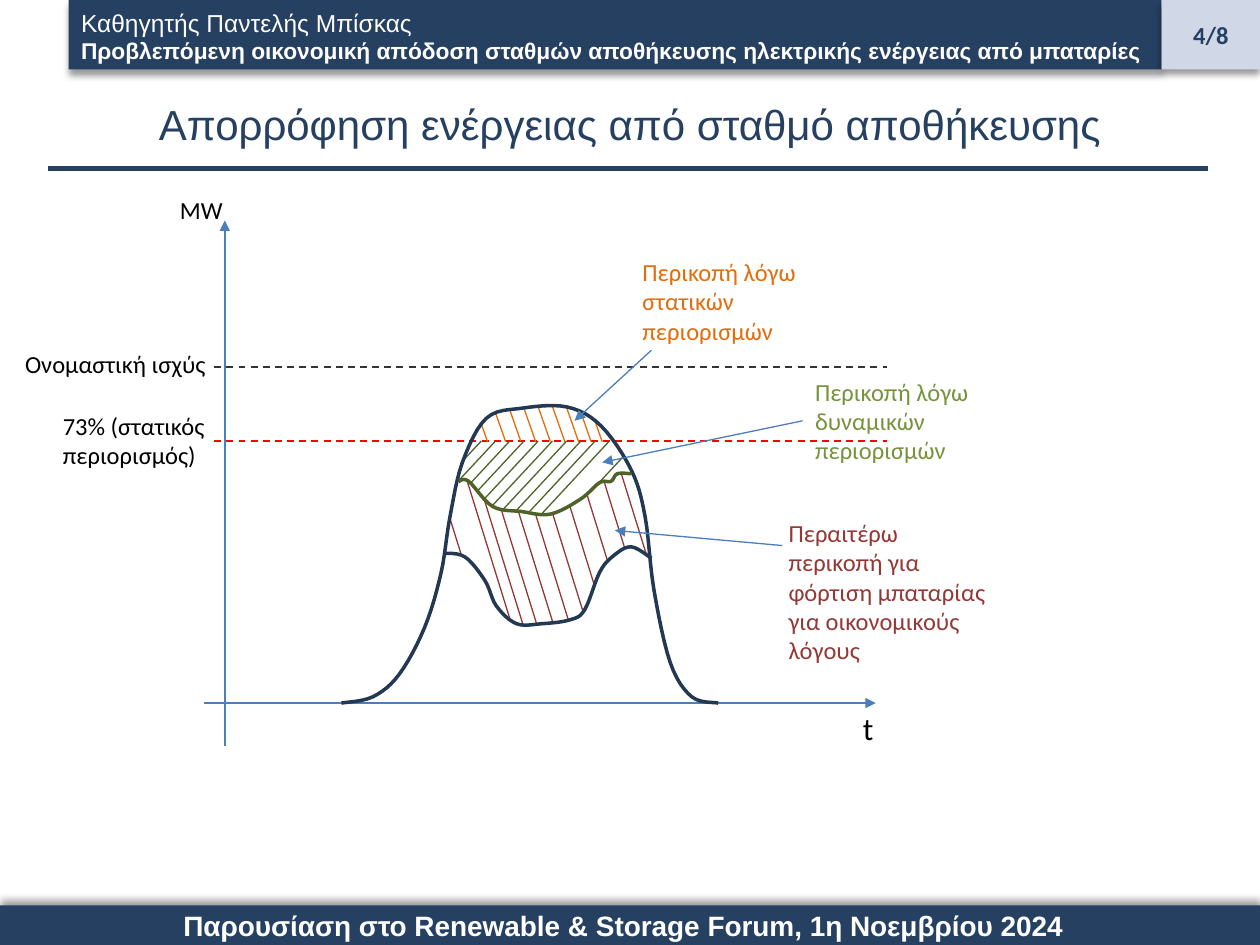
from lxml import etree
from pptx import Presentation
from pptx import util as u
from pptx.dml.color import RGBColor
from pptx.enum import dml, shapes, text
from pptx.oxml.ns import qn

COLUMNS, ROWS = 100, 75
WIDTH, HEIGHT = u.Inches(10), u.Inches(7.5)
COLORS = {
    "navy": "254061", "pale": "D0D8E8", "white": "FFFFFF", "black": "000000",
    "arrow": "4B7EBC", "curve": "233953", "nominal": "333333", "limit": "FF0000",
    "static": "E46C0A", "dynamic": "4F6228", "dynamic_text": "77933C", "charging": "953735",
}
LEFT, CENTER = text.PP_ALIGN.LEFT, text.PP_ALIGN.CENTER
TOP, MIDDLE = text.MSO_ANCHOR.TOP, text.MSO_ANCHOR.MIDDLE

TIME_AXIS, POWER_AXIS = 55.8, 17.85
NOMINAL_POWER, STATIC_LIMIT = 29.15, 35
LIMIT_START, LIMIT_END = 17, 70.4

PRODUCTION_KNOTS = [
    (27.1, TIME_AXIS), (29.6, 55.3), (31.7, 53.5), (33.7, 49.8), (35, 45.5), (35.7, 41.1),
    (36.7, 36.7), (38.6, 33.2), (41.4, 32.4), (45, 32.3), (47.7, 33.8), (50.1, 37.3),
    (51.2, 41), (51.9, 46.8), (53.2, 52.6), (54.9, 55.3), (57, TIME_AXIS),
]
DYNAMIC_KNOTS = [
    (36.4, 38.2), (37.2, 38.2), (39.1, 40.2), (41.4, 40.6), (43.7, 40.8),
    (46.1, 39.6), (47.6, 38.3), (48.5, 38.2), (49, 37.6), (50.1, 37.6),
]
CHARGING_KNOTS = [
    (35.2, 43.9), (36.9, 44.2), (38.5, 46.1), (39.4, 48.1), (41, 49.5), (43, 49.5),
    (45.2, 49.2), (46.4, 48.4), (47.6, 45.4), (48.7, 44.1), (50.1, 43.4), (51.7, 44.3),
]


def smooth(knots, steps=6):
    padded = [knots[0], *knots, knots[-1]]
    points = []
    for before, start, end, after in zip(padded, padded[1:], padded[2:], padded[3:]):
        for step in range(steps):
            t = step / steps
            points.append(tuple(
                b + t * (c - a) / 2 + t ** 2 * (2 * a - 5 * b + 4 * c - d) / 2
                + t ** 3 * (3 * b - a - 3 * c + d) / 2
                for a, b, c, d in zip(before, start, end, after)))
    return points + [knots[-1]]


def level(curve, x):
    if x <= curve[0][0]:
        return curve[0][1]
    for (x1, y1), (x2, y2) in zip(curve, curve[1:]):
        if x1 <= x <= x2:
            return y1 + (y2 - y1) * (x - x1) / (x2 - x1) if x2 > x1 else y1
    return curve[-1][1]


def hatch(first, last, count, slant, ceiling, floor, step=0.1):
    for i in range(count):
        x = head_x = first + (last - first) * i / (count - 1)
        y = head_y = ceiling(head_x)
        while ceiling(x) <= y < floor(x):
            x, y = x + slant * step, y + step
        yield head_x, head_y, x, y


def color(name):
    return RGBColor.from_string(COLORS[name])


def grid(*cells):
    return [round(cell * (HEIGHT / ROWS if i % 2 else WIDTH / COLUMNS))
            for i, cell in enumerate(cells)]


def write(frame, lines, align, anchor):
    frame.word_wrap = True
    frame.vertical_anchor = anchor
    for i, (words, font, size, bold, tint) in enumerate(lines):
        paragraph = frame.add_paragraph() if i else frame.paragraphs[0]
        paragraph.text = words
        paragraph.alignment = align
        paragraph.font.name = font
        paragraph.font.size = u.Pt(size)
        paragraph.font.bold = bold
        paragraph.font.color.rgb = color(tint)


def add_label(slide, cells, words, tint="black", size=14, font="Calibri",
              align=LEFT, anchor=TOP):
    box = slide.shapes.add_textbox(*grid(*cells))
    write(box.text_frame, [(words, font, size, False, tint)], align, anchor)


def add_band(slide, cells, fill, lines, align, shadow_angle):
    band = slide.shapes.add_shape(shapes.MSO_SHAPE.RECTANGLE, *grid(*cells))
    band.fill.solid()
    band.fill.fore_color.rgb = color(fill)
    band.line.fill.background()
    band.shadow.inherit = False
    effects = band._element.spPr.find(qn("a:effectLst"))
    shadow = etree.SubElement(effects, qn("a:outerShdw"), blurRad=str(u.Pt(4)),
                              dist=str(u.Pt(3)), dir=str(shadow_angle * 60000),
                              algn="t", rotWithShape="0")
    tint = etree.SubElement(shadow, qn("a:srgbClr"), val=COLORS["black"])
    etree.SubElement(tint, qn("a:alpha"), val="40000")
    write(band.text_frame, lines, align, MIDDLE)
    return band.text_frame


def add_line(slide, cells, tint, width=0.75, dashed=False, arrow=False):
    line = slide.shapes.add_connector(shapes.MSO_CONNECTOR.STRAIGHT, *grid(*cells))
    line.line.color.rgb = color(tint)
    line.line.width = u.Pt(width)
    if dashed:
        line.line.dash_style = dml.MSO_LINE.DASH
    if arrow:
        etree.SubElement(line.line._get_or_add_ln(), qn("a:tailEnd"), type="triangle")
    etree.SubElement(line._element.spPr, qn("a:effectLst"))


def add_curve(slide, points, tint):
    start, *rest = [grid(*point) for point in points]
    builder = slide.shapes.build_freeform(*start)
    builder.add_line_segments(rest, close=False)
    curve = builder.convert_to_shape()
    curve.fill.background()
    curve.line.color.rgb = color(tint)
    curve.line.width = u.Pt(2)
    curve.shadow.inherit = False


def add_callout(slide, cells, words, tint, arrow_cells):
    add_label(slide, cells, words, tint)
    add_line(slide, arrow_cells, "arrow", arrow=True)


def add_frame(slide):
    add_line(slide, (3.8, 13.35, 95.9, 13.35), "navy", 3)
    footer = add_band(slide, (0, 71.85, COLUMNS, ROWS - 71.85), "navy", [
        ("Παρουσίαση στο Renewable & Storage Forum, 1η Νοεμβρίου 2024",
         "Arial", 16, True, "white")], CENTER, 270)
    footer.margin_right = u.Inches(0.2)
    header = add_band(slide, (5.45, 0, 86.75, 5.5), "navy", [
        ("Καθηγητής Παντελής Μπίσκας", "Arial", 14, False, "white"),
        ("Προβλεπόμενη οικονομική απόδοση σταθμών αποθήκευσης ηλεκτρικής ενέργειας από μπαταρίες",
         "Arial", 13, True, "white")], LEFT, 90)
    header.paragraphs[0].line_spacing = 1.1
    add_band(slide, (92.2, 0, COLUMNS - 92.2, 5.5), "pale",
             [("4/8", "Calibri", 14, True, "navy")], CENTER, 90)
    add_label(slide, (0, 6.5, COLUMNS, 6.7), "Απορρόφηση ενέργειας από σταθμό αποθήκευσης",
              "navy", 24, "Arial", CENTER, MIDDLE)


def add_axes(slide):
    add_line(slide, (POWER_AXIS, 59.2, POWER_AXIS, 17.5), "arrow", arrow=True)
    add_line(slide, (16.2, TIME_AXIS, 69.5, TIME_AXIS), "arrow", arrow=True)
    for power, tint in ((NOMINAL_POWER, "nominal"), (STATIC_LIMIT, "limit")):
        add_line(slide, (LIMIT_START, power, LIMIT_END, power), tint, 1, dashed=True)
    add_label(slide, (13.3, 15, 5.8, 3.4), "MW")
    add_label(slide, (67.5, TIME_AXIS, 6.7, 4), "t", size=18)
    add_label(slide, (1, 27.2, 16.9, 3.4), "Ονομαστική ισχύς")
    add_label(slide, (4, 32.1, 13.9, 5.7), "73% (στατικός περιορισμός)")


def add_curtailment(slide):
    production, dynamic, charging = map(
        smooth, (PRODUCTION_KNOTS, DYNAMIC_KNOTS, CHARGING_KNOTS))

    def produced(x):
        return level(production, x)

    def statically_limited(x):
        return max(STATIC_LIMIT, produced(x))

    def dynamically_limited(x):
        return max(level(dynamic, x), produced(x))

    def after_charging(x):
        return level(charging, x)

    regions = {
        "static": hatch(38.2, 47.2, 9, 0.35, produced, lambda x: STATIC_LIMIT),
        "dynamic": hatch(38.2, 49.5, 11, -0.93, statically_limited, dynamically_limited),
        "charging": hatch(35.7, 49.3, 11, 0.31, dynamically_limited, after_charging),
    }
    for tint, strokes in regions.items():
        for stroke in strokes:
            add_line(slide, stroke, tint)
    for curve, tint in ((production, "curve"), (dynamic, "dynamic"), (charging, "curve")):
        add_curve(slide, curve, tint)


def add_explanations(slide):
    add_callout(slide, (50, 19.9, 19.5, 8.1), "Περικοπή λόγω στατικών περιορισμών",
                "static", (51.7, 27.8, 45.6, 33.4))
    add_callout(slide, (63.7, 29.4, 18.5, 8.1), "Περικοπή λόγω δυναμικών περιορισμών",
                "dynamic_text", (63.7, 33.4, 47.8, 36.7))
    add_callout(slide, (61.6, 40.6, 18.5, 12.8),
                "Περαιτέρω περικοπή για φόρτιση μπαταρίας για οικονομικούς λόγους",
                "charging", (62.1, 43.3, 48.8, 42.1))


def main():
    deck = Presentation()
    deck.slide_width, deck.slide_height = WIDTH, HEIGHT
    slide = deck.slides.add_slide(deck.slide_layouts[6])
    add_frame(slide)
    add_axes(slide)
    add_curtailment(slide)
    add_explanations(slide)
    deck.save("out.pptx")


if __name__ == "__main__":
    main()
